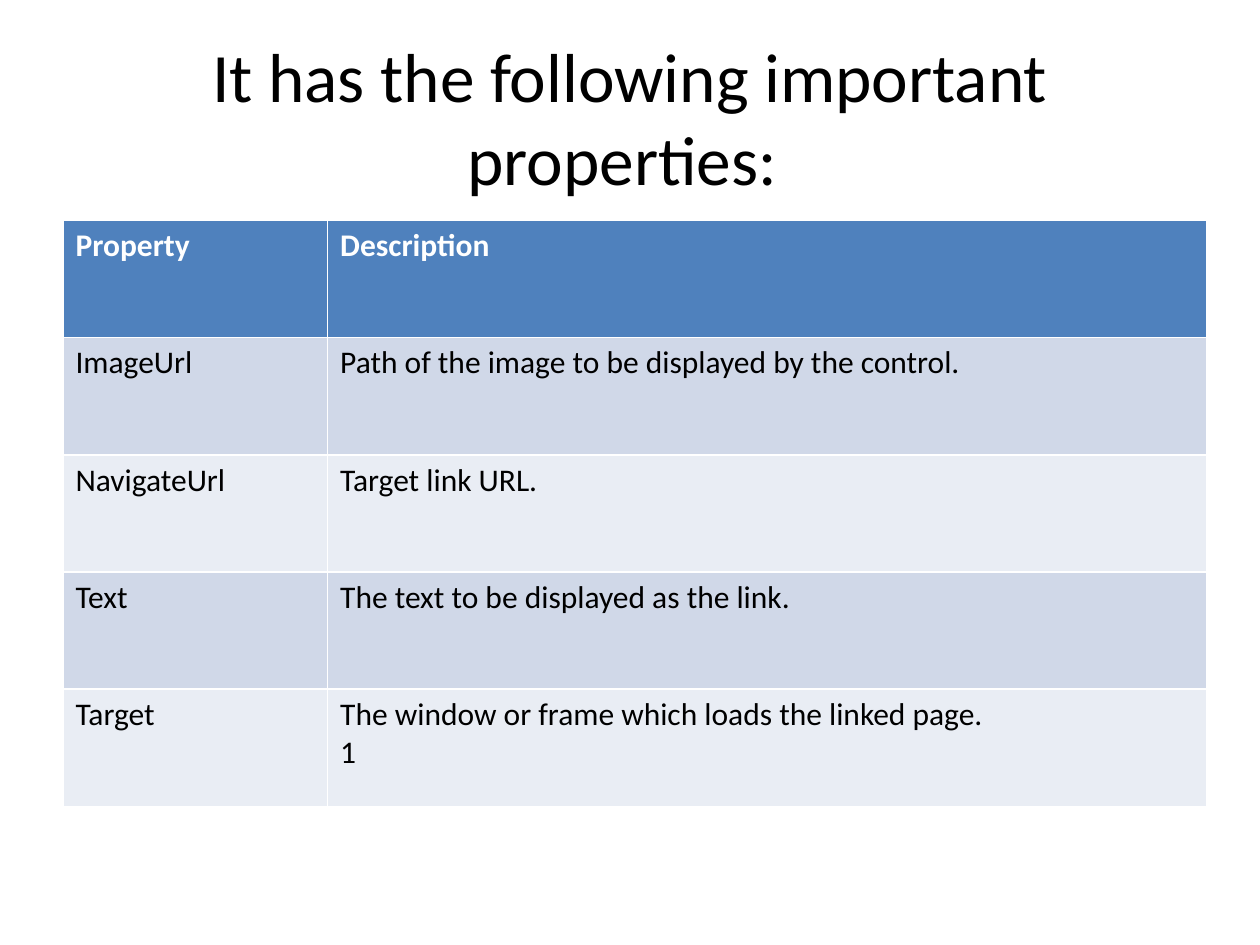
import dataclasses
import typing

import pptx
import pptx.dml.color
import pptx.enum.text
import pptx.util

WIDE, HIGH = 10, 7.5


@dataclasses.dataclass
class Row:
    name: str
    text: str
    fill: str
    font: dict[str, typing.Any]


def size(num: float) -> pptx.util.Length:
    return pptx.util.Inches(num)


def tint(spot: typing.Any, hue: str) -> None:
    spot.rgb = pptx.dml.color.RGBColor.from_string(hue)


def style(font: typing.Any, form: dict[str, typing.Any]) -> None:
    for key, val in form.items():
        if key == "color":
            tint(font.color, val)
        else:
            setattr(font, key, val)


def place(item: typing.Any, left: float, top: float, wide: float, high: float) -> None:
    box = {"left": left * WIDE, "top": top * HIGH, "width": wide * WIDE, "height": high * HIGH}
    for key, val in box.items():
        setattr(item, key, size(val))


def head(slide: typing.Any, text: str) -> None:
    title = slide.shapes.title
    place(title, 0.05, 0.04, 0.9, 1 / 6)
    frame = title.text_frame
    frame.text = text
    form = {
        "word_wrap": True,
        "auto_size": pptx.enum.text.MSO_AUTO_SIZE.NONE,
        "vertical_anchor": pptx.enum.text.MSO_ANCHOR.MIDDLE,
    }
    for key, val in form.items():
        setattr(frame, key, val)
    line = frame.paragraphs[0]
    line.alignment = pptx.enum.text.PP_ALIGN.CENTER
    style(line.runs[0].font, {**BODY, "size": pptx.util.Pt(39.6)})


def grid(slide: typing.Any, rows: list[Row], cols: list[float], high: float) -> None:
    table = slide.shapes.add_table(
        len(rows), len(cols), size(0.5), size(1.75), size(sum(cols)), size(high * len(rows))
    ).table
    for col, wide in zip(table.columns, cols):
        col.width = size(wide)
    for line, row in zip(table.rows, rows):
        line.height = size(high)
        for cell, text in zip(line.cells, (row.name, row.text)):
            cell.fill.solid()
            tint(cell.fill.fore_color, row.fill)
            cell.text = text
            for part in cell.text_frame.paragraphs:
                style(part.runs[0].font, row.font)


BODY = {"name": "Calibri", "size": pptx.util.Pt(18), "bold": False, "color": "000000"}
HEAD = {**BODY, "bold": True, "color": "FFFFFF"}
BANDS = ("D0D8E8", "E9EDF4")
PROPS = [
    ("ImageUrl", "Path of the image to be displayed by the control."),
    ("NavigateUrl", "Target link URL."),
    ("Text", "The text to be displayed as the link."),
    ("Target", "The window or frame which loads the linked page.\n1"),
]


def main() -> None:
    deck = pptx.Presentation()
    deck.slide_width, deck.slide_height = size(WIDE), size(HIGH)
    slide = deck.slides.add_slide(deck.slide_layouts[5])
    head(slide, "It has the following important properties: ")
    rows = [Row("Property", "Description", "4F81BD", HEAD)]
    rows += [Row(name, text, BANDS[i % 2], BODY) for i, (name, text) in enumerate(PROPS)]
    grid(slide, rows, [2.1, 6.98], 0.93)
    deck.save("out.pptx")


if __name__ == "__main__":
    main()
